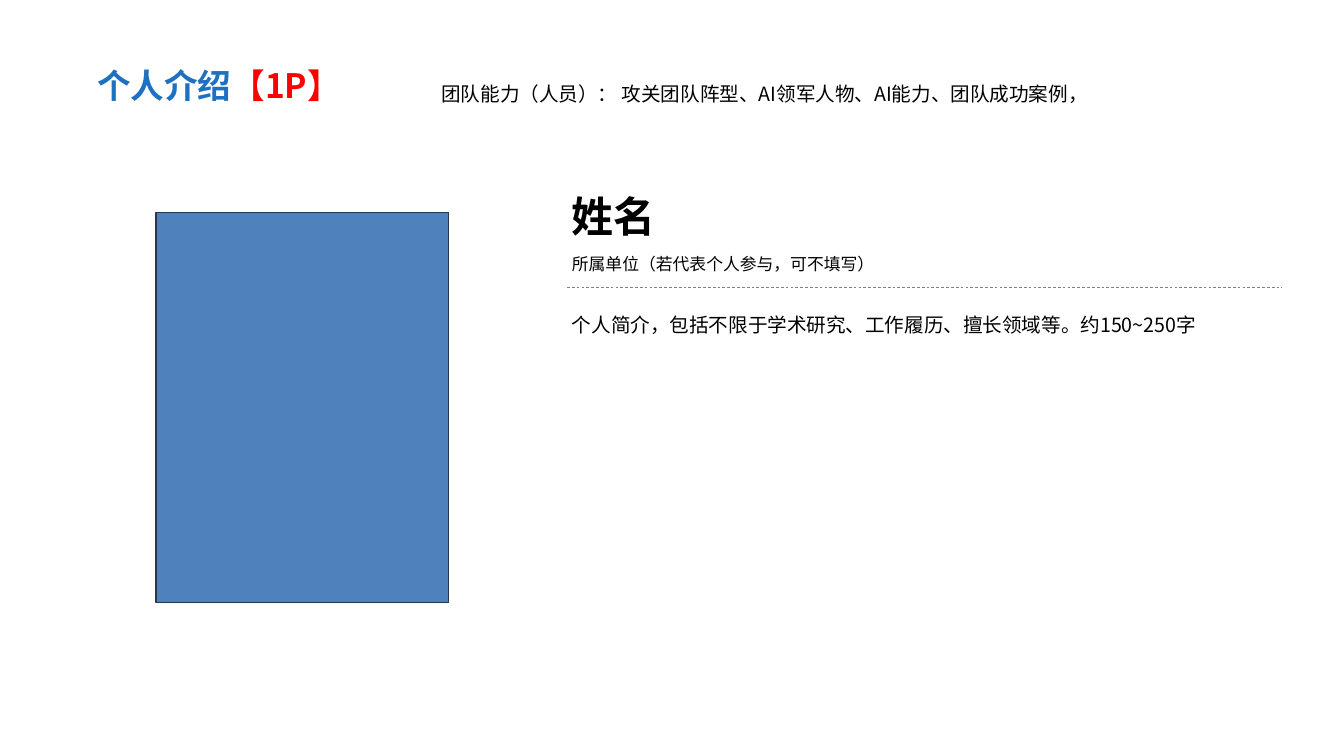
from lxml import etree
from pptx import Presentation
from pptx.dml.color import RGBColor
from pptx.enum.dml import MSO_LINE
from pptx.enum.shapes import MSO_CONNECTOR, MSO_SHAPE
from pptx.enum.text import MSO_ANCHOR, MSO_AUTO_SIZE
from pptx.oxml.ns import qn
from pptx.util import Inches, Pt

RECTANGLE = MSO_SHAPE.RECTANGLE
STRAIGHT = MSO_CONNECTOR.STRAIGHT
DASH = MSO_LINE.DASH
TOP, MIDDLE = MSO_ANCHOR.TOP, MSO_ANCHOR.MIDDLE
GROW, FIXED = MSO_AUTO_SIZE.SHAPE_TO_FIT_TEXT, MSO_AUTO_SIZE.NONE

FONT = "Noto Sans CJK SC"
COLORS = {
    "text": "000000",
    "title": "1E70C0",
    "page_limit": "FF0000",
    "photo": "4F81BD",
    "photo_edge": "233953",
    "divider": "7F7F7F",
}
PROFILE_LEFT = 11.25
PROFILE_WIDTH = 14.18


def color(name):
    """Return the named palette colour."""
    return RGBColor.from_string(COLORS[name])


def add_text(slide, box, segments, size, bold=False, spacing=1.0,
             anchor=MIDDLE, autosize=GROW, wrap=True):
    """Add a one-paragraph text box from (wording, colour name) segments."""
    frame = slide.shapes.add_textbox(*map(Inches, box)).text_frame
    frame.word_wrap = wrap
    frame.auto_size = autosize
    frame.vertical_anchor = anchor
    paragraph = frame.paragraphs[0]
    paragraph.line_spacing = spacing
    for wording, color_name in segments:
        run = paragraph.add_run()
        run.text = wording
        run.font.size = Pt(size)
        run.font.bold = bold
        run.font.name = FONT
        run.font.color.rgb = color(color_name)
        east_asian = etree.SubElement(run.font._element, qn("a:ea"))
        east_asian.set("typeface", FONT)


def add_photo_frame(slide, box):
    """Add the filled rectangle reserved for the portrait."""
    photo = slide.shapes.add_shape(RECTANGLE, *map(Inches, box))
    photo.shadow.inherit = False
    photo.fill.solid()
    photo.fill.fore_color.rgb = color("photo")
    photo.line.color.rgb = color("photo_edge")
    photo.line.width = Pt(2)


def add_divider(slide, left, top, width):
    """Add a horizontal dashed rule."""
    ends = map(Inches, (left, top, left + width, top))
    divider = slide.shapes.add_connector(STRAIGHT, *ends)
    divider.line.color.rgb = color("divider")
    divider.line.width = Pt(1)
    divider.line.dash_style = DASH
    etree.SubElement(divider._element.spPr, qn("a:effectLst"))


def main():
    """Build the personal introduction slide."""
    deck = Presentation()
    deck.slide_width = Inches(26.67)
    deck.slide_height = Inches(15)
    slide = deck.slides.add_slide(deck.slide_layouts[6])

    add_photo_frame(slide, (3.1, 4.22, 5.8, 7.74))
    add_text(slide, (PROFILE_LEFT, 3.73, 2.85, 1.11), [("姓名", "text")], 60, bold=True)
    add_text(slide, (PROFILE_LEFT, 4.81, 8.73, 0.64),
             [("所属单位（若代表个人参与，可不填写）", "text")], 24, spacing=1.5)
    add_text(slide, (PROFILE_LEFT, 5.96, PROFILE_WIDTH, 0.72),
             [("个人简介，包括不限于学术研究、工作履历、擅长领域等。约150~250字", "text")],
             28, spacing=1.5)
    add_divider(slide, PROFILE_LEFT, 5.7, PROFILE_WIDTH)
    add_text(slide, (1.83, 1.33, 23, 2.9),
             [("个人介绍", "title"), ("【1P】", "page_limit")],
             48, bold=True, spacing=0.9, anchor=TOP, autosize=FIXED)
    add_text(slide, (8.66, 1.18, 13.28, 0.9),
             [("团队能力（人员）： 攻关团队阵型、AI领军人物、AI能力、团队成功案例，", "text")],
             28, spacing=2.0, wrap=False)

    deck.save("out.pptx")


if __name__ == "__main__":
    main()
